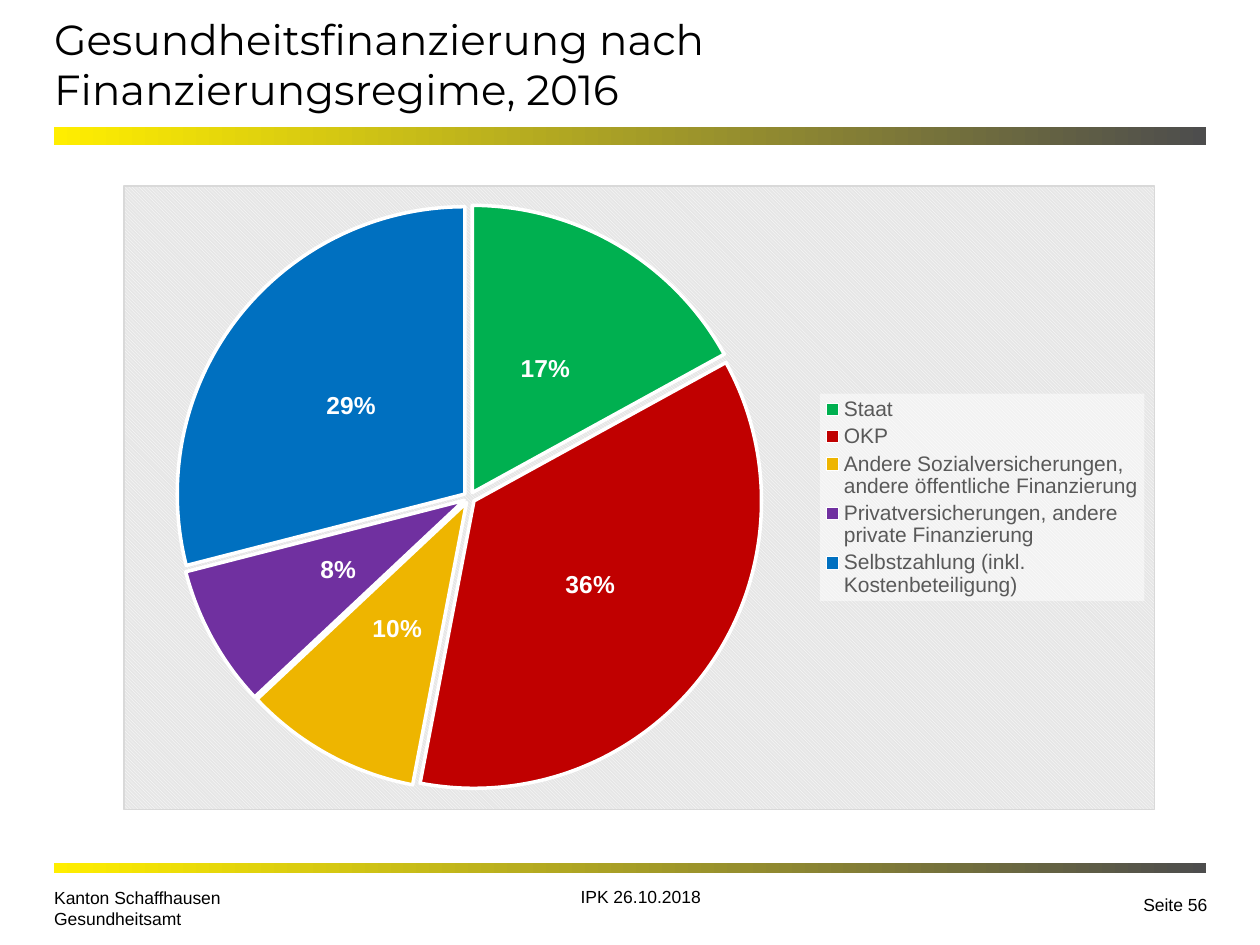
from lxml import etree
from pptx import Presentation
from pptx import util as u
from pptx.chart.data import CategoryChartData
from pptx.dml.color import RGBColor
from pptx.enum import chart as ch, shapes, text
from pptx.oxml import parse_xml
from pptx.oxml.ns import nsdecls, qn

TITLE = "Gesundheitsfinanzierung nach Finanzierungsregime, 2016"
SHARES = [
    ("Staat", 17, "00B050"),
    ("OKP", 36, "C00000"),
    ("Andere Sozialversicherungen, andere öffentliche Finanzierung", 10, "EEB500"),
    ("Privatversicherungen, andere private Finanzierung", 8, "7030A0"),
    ("Selbstzahlung (inkl. Kostenbeteiligung)", 29, "0070C0"),
]
BARS = [(1.01, 0.14), (6.85, 0.08)]
FOOTERS = [
    (["Kanton Schaffhausen", "Gesundheitsamt"], (0.43, 6.94, 2.65, 0.48),
     dict(anchor=text.MSO_ANCHOR.BOTTOM, side=0)),
    (["IPK 26.10.2018"], (3.5, 6.98, 3.17, 0.52), dict(align=text.PP_ALIGN.CENTER)),
    (["Seite 56"], (8.74, 6.94, 0.94, 0.48),
     dict(align=text.PP_ALIGN.RIGHT, anchor=text.MSO_ANCHOR.MIDDLE)),
]
PLOT_BOX = (0.05, 0.03, 0.57, 0.94)
LEGEND_BOX = (0.675, 0.333, 0.315, 0.333)


def rgb(value):
    return RGBColor.from_string(value)


def place(sp, box):
    sp.left, sp.top, sp.width, sp.height = (u.Inches(v) for v in box)


def style_font(font, size, color="000000", bold=False, name="Arial"):
    font.size, font.bold, font.name = u.Pt(size), bold, name
    font.color.rgb = rgb(color)


def write(sp, lines, size=10, name="Arial", align=text.PP_ALIGN.LEFT,
          anchor=text.MSO_ANCHOR.TOP, side=0.1):
    tf = sp.text_frame
    tf.word_wrap = True
    tf.auto_size = text.MSO_AUTO_SIZE.NONE
    tf.vertical_anchor = anchor
    tf.margin_left = tf.margin_right = u.Inches(side)
    tf.margin_top = tf.margin_bottom = u.Inches(0.05)
    for i, line in enumerate(lines):
        p = tf.paragraphs[0] if i == 0 else tf.add_paragraph()
        p.alignment = align
        r = p.add_run()
        r.text = line
        style_font(r.font, size, name=name)


def add_bar(s, top, height):
    sp = s.shapes.add_shape(shapes.MSO_SHAPE.RECTANGLE, 0, 0, 0, 0)
    place(sp, (0.43, top, 9.14, height))
    sp.shadow.inherit = False
    sp.line.fill.background()
    sp.fill.gradient()
    sp.fill.gradient_angle = 0
    for stop, color, position in zip(sp.fill.gradient_stops, ("FFEE00", "4D4D4D"), (0, 1)):
        stop.color.rgb = rgb(color)
        stop.position = position


def manual_layout(box, inner=False):
    target = '<c:layoutTarget val="inner"/>' if inner else ""
    modes = '<c:xMode val="edge"/><c:yMode val="edge"/>'
    sizes = "".join(f'<c:{k} val="{v}"/>' for k, v in zip("xywh", box))
    return parse_xml(f'<c:layout {nsdecls("c")}><c:manualLayout>{target}{modes}{sizes}'
                     '</c:manualLayout></c:layout>')


def set_layout(parent, index, layout):
    for old in parent.findall(qn("c:layout")):
        parent.remove(old)
    parent.insert(index, layout)


def solid(color, alpha=100):
    return (f'<a:solidFill><a:srgbClr val="{color}"><a:alpha val="{alpha * 1000}"/>'
            '</a:srgbClr></a:solidFill>')


def shape_props(content):
    return parse_xml(f'<c:spPr {nsdecls("c", "a")}>{content}</c:spPr>')


def add_pie(s):
    data = CategoryChartData()
    data.categories = [name for name, _, _ in SHARES]
    data.add_series("Series 1", [value for _, value, _ in SHARES])
    frame = s.shapes.add_chart(ch.XL_CHART_TYPE.PIE, 0, 0, u.Inches(1), u.Inches(1), data)
    place(frame, (0.98, 1.47, 8.19, 4.96))
    chart = frame.chart
    chart.has_title = False
    style_font(chart.font, 10)
    plot = chart.plots[0]
    plot.vary_by_categories = True
    series = plot.series[0]
    explosion = etree.Element(qn("c:explosion"), val="2")
    series._element.find(qn("c:tx")).addnext(explosion)
    for i, (_, _, color) in enumerate(SHARES):
        fmt = series.points[i].format
        fmt.fill.solid()
        fmt.fill.fore_color.rgb = rgb(color)
        fmt.line.color.rgb = rgb("FFFFFF")
        fmt.line.width = u.Pt(2)

    labels = series.data_labels
    labels.show_percentage = True
    labels.show_value = False
    labels.number_format = "0%"
    labels.number_format_is_linked = False
    labels.position = ch.XL_LABEL_POSITION.CENTER
    style_font(labels.font, 14, "FFFFFF", bold=True)

    chart.has_legend = True
    legend = chart.legend
    legend.position = ch.XL_LEGEND_POSITION.RIGHT
    legend.include_in_layout = False
    style_font(legend.font, 12, "595959")
    set_layout(legend._element, 1, manual_layout(LEGEND_BOX))
    legend._element.find(qn("c:overlay")).addnext(shape_props(solid("FFFFFF", 50)))

    root = chart._chartSpace
    set_layout(root.find(".//" + qn("c:plotArea")), 0, manual_layout(PLOT_BOX, inner=True))
    root.find(qn("c:chart")).addnext(shape_props(
        '<a:pattFill prst="dkDnDiag"><a:fgClr><a:srgbClr val="FFFFFF"/></a:fgClr>'
        '<a:bgClr><a:srgbClr val="E6E6E6"/></a:bgClr></a:pattFill>'
        f'<a:ln w="{u.Pt(0.75)}">{solid("D9D9D9")}</a:ln>'))


def main():
    prs = Presentation()
    prs.slide_width, prs.slide_height = u.Inches(10), u.Inches(7.5)
    s = prs.slides.add_slide(prs.slide_layouts[5])
    for top, height in BARS:
        add_bar(s, top, height)
    title = s.shapes.title
    place(title, (0.43, 0, 7.14, 1.01))
    write(title, [TITLE], size=24, name="Montserrat", anchor=text.MSO_ANCHOR.MIDDLE, side=0)
    add_pie(s)
    for lines, box, fmt in FOOTERS:
        sp = s.shapes.add_textbox(0, 0, 0, 0)
        place(sp, box)
        write(sp, lines, **fmt)
    prs.save("out.pptx")


if __name__ == "__main__":
    main()
